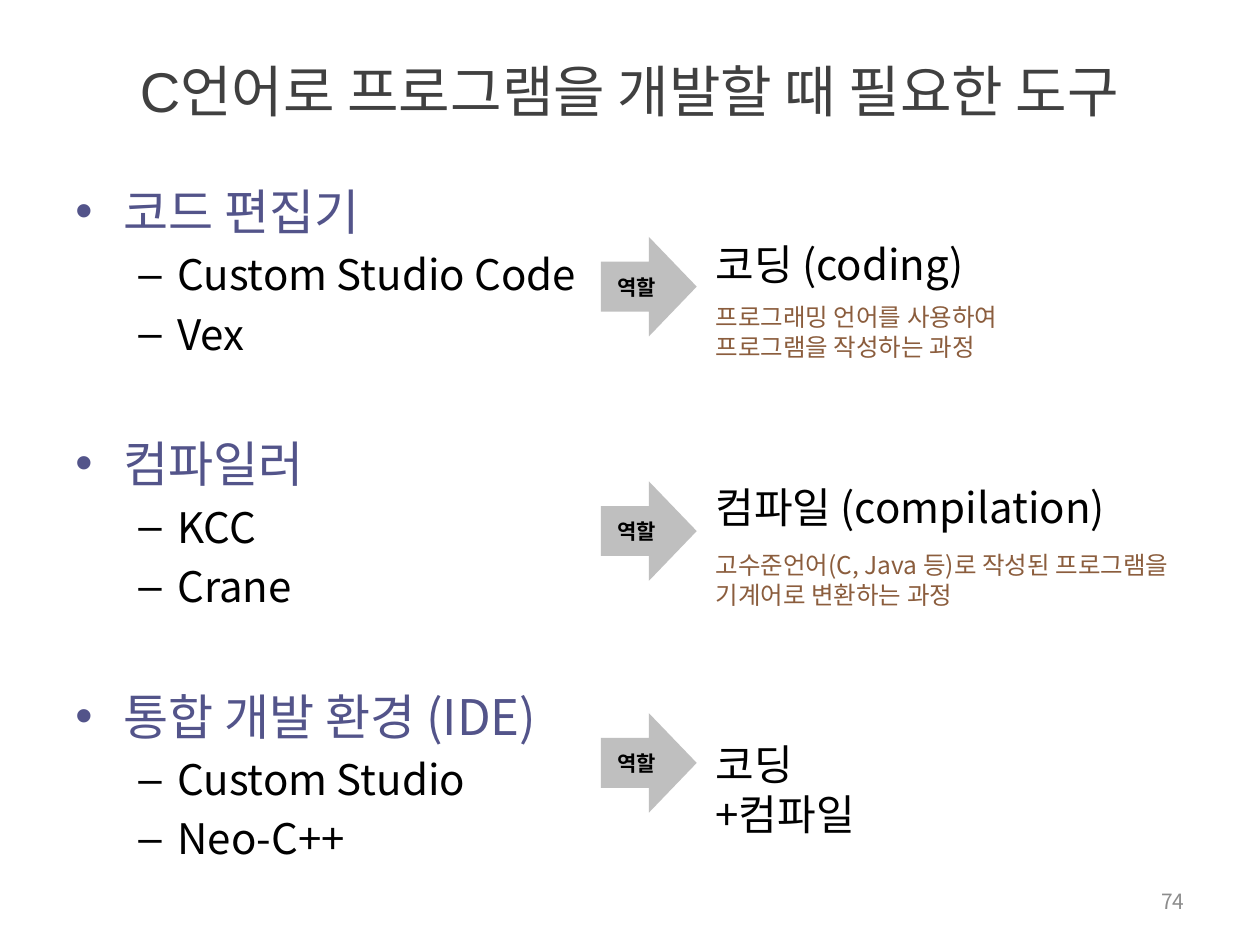
from pptx import Presentation, util as u
from pptx.dml.color import RGBColor
from pptx.enum import shapes, text
from pptx.oxml.ns import qn
from lxml import etree

HUES = {"title": "404040", "head": "53548A", "ink": "000000",
        "note": "8B5D3D", "page": "8C8C8C", "arrow": "BFBFBF"}
FONT = "Noto Sans CJK KR"
TOOLS = [
    ("코드 편집기", ["Custom Studio Code", "Vex"]),
    ("컴파일러", ["KCC", "Crane"]),
    ("통합 개발 환경 (IDE)", ["Custom Studio", "Neo-C++"]),
]
ROLES = [
    (1.88, 1.84, 3.44, "코딩 (coding)"),
    (3.82, 3.77, 3.44, "컴파일 (compilation)"),
    (5.66, 5.81, 1.86, "코딩+컴파일"),
]
NOTES = [
    (2.35, "프로그래밍 언어를 사용하여\n프로그램을 작성하는 과정"),
    (4.32, "고수준언어(C, Java 등)로 작성된 프로그램을\n기계어로 변환하는 과정"),
]


def write(para, words, size=24, hue="ink", font=FONT, bold=False, align="LEFT"):
    """Fill a paragraph with formatted text."""
    para.text = words
    para.alignment = getattr(text.PP_ALIGN, align)
    for run in para.runs:
        run.font.size = u.Pt(size)
        run.font.name = font
        run.font.bold = bold
        run.font.color.rgb = RGBColor.from_string(HUES[hue])
        east = etree.SubElement(run.font._element, qn("a:ea"))
        east.set("typeface", FONT)


def add_box(slide, place, words=None, anchor="TOP", **form):
    """Add a wrapping text box and return its frame."""
    frame = slide.shapes.add_textbox(*map(u.Inches, place)).text_frame
    frame.word_wrap = True
    frame.vertical_anchor = getattr(text.MSO_ANCHOR, anchor)
    if words:
        write(frame.paragraphs[0], words, **form)
    return frame


def set_mark(para, mark, left, hang):
    """Give a paragraph a bullet with a hanging indent."""
    props = para._p.get_or_add_pPr()
    props.set("marL", str(u.Inches(left)))
    props.set("indent", str(-u.Inches(hang)))
    etree.SubElement(props, qn("a:buFont")).set("typeface", "Arial")
    etree.SubElement(props, qn("a:buChar")).set("char", mark)


def add_tools(slide):
    """List the tool groups with their examples."""
    frame = add_box(slide, (0.5, 1.39, 9, 5.43))
    for rank, (head, names) in enumerate(TOOLS):
        para = frame.add_paragraph() if rank else frame.paragraphs[0]
        write(para, head, size=28, hue="head")
        para.space_before = u.Pt(43 if rank else 5)
        set_mark(para, "•", 0.38, 0.38)
        for name in names:
            para = frame.add_paragraph()
            write(para, name)
            para.level = 1
            para.space_before = u.Pt(5)
            set_mark(para, "–", 0.81, 0.31)


def add_arrow(slide, top):
    """Add a grey role arrow."""
    place = map(u.Inches, (4.77, top, 0.76, 0.79))
    arrow = slide.shapes.add_shape(shapes.MSO_SHAPE.RIGHT_ARROW, *place)
    arrow.shadow.inherit = False
    arrow.fill.solid()
    arrow.fill.fore_color.rgb = RGBColor.from_string(HUES["arrow"])
    arrow.line.fill.background()
    frame = arrow.text_frame
    frame.word_wrap = False
    frame.vertical_anchor = text.MSO_ANCHOR.MIDDLE
    write(frame.paragraphs[0], "역할", size=12, bold=True, align="CENTER")


def main():
    """Build and save the slide."""
    deck = Presentation()
    deck.slide_width, deck.slide_height = u.Inches(10), u.Inches(7.5)
    slide = deck.slides.add_slide(deck.slide_layouts[6])
    add_box(slide, (0.5, 0.36, 9, 0.71), "C언어로 프로그램을 개발할 때 필요한 도구",
            "MIDDLE", size=32, hue="title", font="Arial", align="CENTER")
    add_tools(slide)
    add_box(slide, (7.17, 6.95, 2.33, 0.4), "74", "MIDDLE",
            size=12, hue="page", align="RIGHT")
    for top, y, width, role in ROLES:
        add_arrow(slide, top)
        add_box(slide, (5.58, y, width, 0.5), role)
    for y, note in NOTES:
        add_box(slide, (5.58, y, 4.22, 0.57), note, size=14, hue="note")
    deck.save("out.pptx")


if __name__ == "__main__":
    main()
